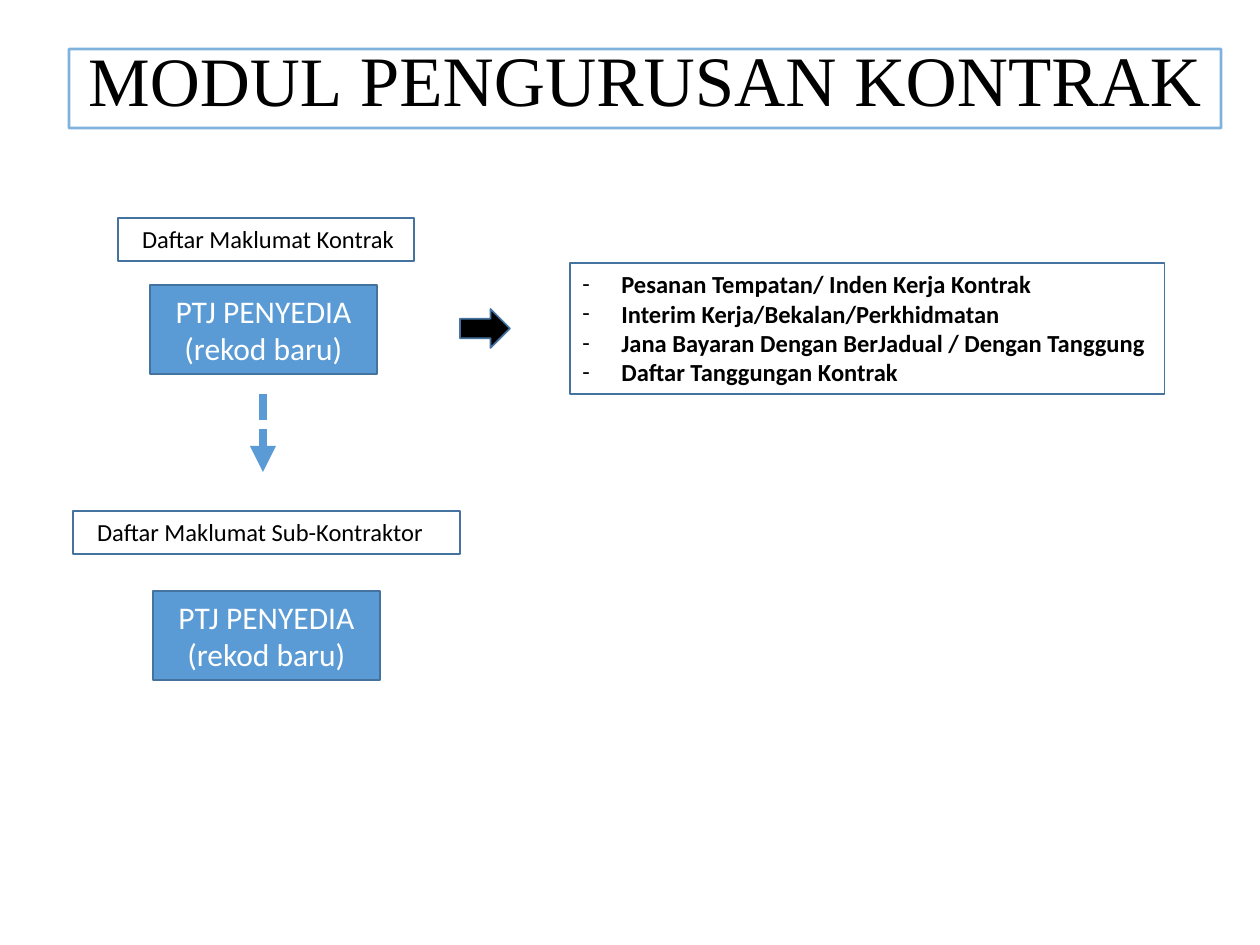
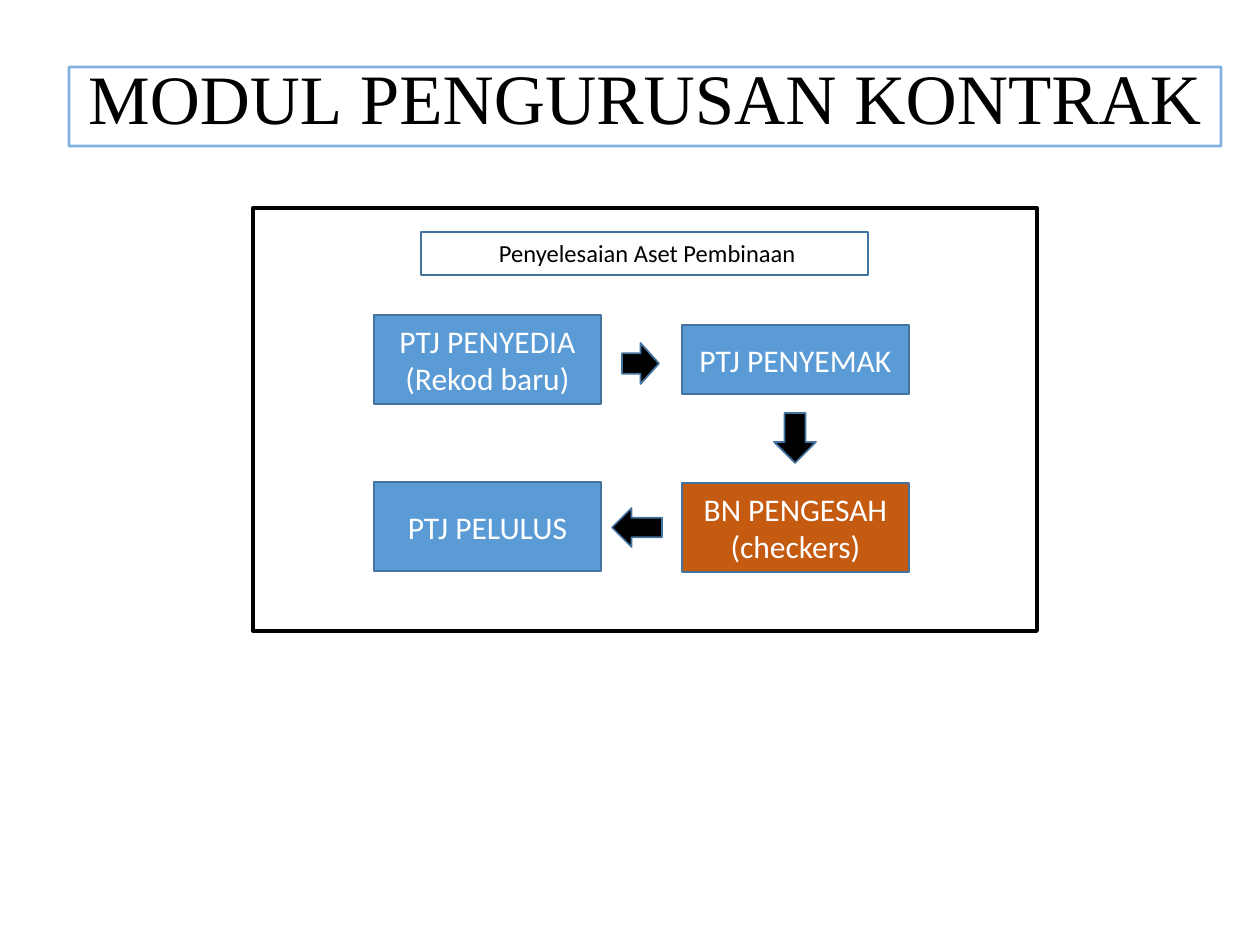
from lxml import etree
from pptx import Presentation
from pptx.dml.color import RGBColor
from pptx.enum.dml import MSO_LINE
from pptx.enum.shapes import MSO_CONNECTOR, MSO_SHAPE
from pptx.enum.text import MSO_ANCHOR, PP_ALIGN
from pptx.oxml.ns import qn
from pptx.util import Emu, Pt

BLUE, EDGE, RUST = "5B9BD5", "43739E", "C55A11"
BLACK, WHITE = "000000", "FFFFFF"
BODY, SERIF = "Calibri", "Times New Roman"
STEP_W, STEP_H = 227, 89
INSET = 13


def px(n):
    return Emu(round(n * 914400 / 126))


def color(code):
    return RGBColor.from_string(code)


def add_box(slide, box, fill=None, line=EDGE, width=0.75, kind=MSO_SHAPE.RECTANGLE):
    shape = slide.shapes.add_shape(kind, *map(px, box))
    shape.shadow.inherit = False
    if fill:
        shape.fill.solid()
        shape.fill.fore_color.rgb = color(fill)
    else:
        shape.fill.background()
    shape.line.color.rgb = color(line)
    shape.line.width = Pt(width)
    return shape


def add_run(para, text, size, ink=BLACK, font=BODY, bold=False):
    run = para.add_run()
    run.text = text
    run.font.size = Pt(size)
    run.font.name = font
    run.font.bold = bold
    run.font.color.rgb = color(ink)


def add_lines(shape, lines, size, align, anchor, ink=BLACK, bold=False):
    frame = shape.text_frame
    frame.word_wrap = True
    frame.vertical_anchor = anchor
    for i, text in enumerate(lines):
        para = frame.add_paragraph() if i else frame.paragraphs[0]
        para.alignment = align
        add_run(para, text, size, ink, bold=bold)
    return frame


def add_title(slide, top):
    shape = add_box(slide, (69, top, 1152, 79), line=BLUE, width=1.5)
    tint = shape.line._get_or_add_ln().find(".//" + qn("a:srgbClr"))
    etree.SubElement(tint, qn("a:alpha"), val="76000")
    frame = shape.text_frame
    frame.word_wrap = True
    frame.vertical_anchor = MSO_ANCHOR.BOTTOM
    para = frame.paragraphs[0]
    para.alignment = PP_ALIGN.CENTER
    para.line_spacing = 0.9
    add_run(para, "MODUL", 39.6, font=SERIF)
    add_run(para, " PENGURUSAN KONTRAK", 40.5, font=SERIF)


def add_label(slide, box, text, align=PP_ALIGN.LEFT, indent=11):
    frame = add_lines(add_box(slide, box), [text], 14, align, MSO_ANCHOR.TOP)
    frame.margin_left = px(INSET + indent)


def add_step(slide, x, y, lines, height=STEP_H, fill=BLUE):
    shape = add_box(slide, (x, y, STEP_W, height), fill, width=1)
    add_lines(shape, lines, 18, PP_ALIGN.CENTER, MSO_ANCHOR.MIDDLE, WHITE)


def add_arrow(slide, box, turn=0):
    shape = add_box(slide, box, BLACK, width=1, kind=MSO_SHAPE.RIGHT_ARROW)
    shape.rotation = turn


def add_link(slide, x, top, end):
    link = slide.shapes.add_connector(MSO_CONNECTOR.STRAIGHT, px(x), px(top), px(x), px(end))
    link.line.color.rgb = color(BLUE)
    link.line.width = Pt(5)
    link.line.dash_style = MSO_LINE.SQUARE_DOT
    etree.SubElement(link.line._get_or_add_ln(), qn("a:tailEnd"), type="triangle")
    etree.SubElement(link._element.spPr, qn("a:effectLst"))


def add_list(slide, box, items):
    frame = add_lines(add_box(slide, box), items, 14, PP_ALIGN.LEFT, MSO_ANCHOR.TOP, bold=True)
    for para in frame.paragraphs:
        props = para._p.get_or_add_pPr()
        props.set("marL", str(px(39)))
        props.set("indent", str(-px(39)))
        etree.SubElement(props, qn("a:buFont"), typeface=BODY)
        etree.SubElement(props, qn("a:buChar"), char="-")


def add_record(slide, x, y):
    """Contract and subcontractor records, down the left side."""
    maker = ["PTJ PENYEDIA", "(rekod baru)"]
    add_label(slide, (x + 45, y, 296, 43), "Daftar Maklumat Kontrak")
    add_step(slide, x + 77, y + 67, maker)
    add_link(slide, x + 190, y + 176, y + 254)
    add_label(slide, (x, y + 293, 387, 43), "Daftar Maklumat Sub-Kontraktor")
    add_step(slide, x + 80, y + 373, maker)


def add_flow(slide, x, y, width, height):
    """Framed approval cycle, clockwise from the top left."""
    left, right = x + 121, x + 429
    add_label(slide, (x + 168, y + 24, 447, 43), "Penyelesaian Aset Pembinaan",
              PP_ALIGN.CENTER, 5)
    # Steps
    add_step(slide, left, y + 107, ["PTJ PENYEDIA", "(Rekod baru)"])
    add_step(slide, right, y + 117, ["PTJ PENYEMAK"], 69)
    add_step(slide, right, y + 275, ["BN PENGESAH", "(checkers)"], fill=RUST)
    add_step(slide, left, y + 274, ["PTJ PELULUS"])
    # Arrows between steps
    add_arrow(slide, (x + 369, y + 135, 37, 41))
    add_arrow(slide, (x + 517, y + 209, 50, 42), 90)
    add_arrow(slide, (x + 359, y + 300, 50, 39), 180)
    # Frame
    add_box(slide, (x, y, width, height), line=BLACK, width=2.25)


def main():
    deck = Presentation()
    deck.slide_width, deck.slide_height = px(1260), px(945)
    blank = deck.slide_layouts[6]

    # Records and what follows from them
    slide = deck.slides.add_slide(blank)
    add_title(slide, 49)
    add_record(slide, 73, 218)
    add_list(slide, (570, 263, 595, 131), [
        "Pesanan Tempatan/ Inden Kerja Kontrak",
        "Interim Kerja/Bekalan/Perkhidmatan",
        "Jana Bayaran Dengan BerJadual / Dengan Tanggung",
        "Daftar Tanggungan Kontrak",
    ])
    add_arrow(slide, (460, 309, 50, 39))

    # Approval cycle
    slide = deck.slides.add_slide(blank)
    add_title(slide, 67)
    add_flow(slide, 253, 208, 784, 423)

    deck.save("out.pptx")


if __name__ == "__main__":
    main()
